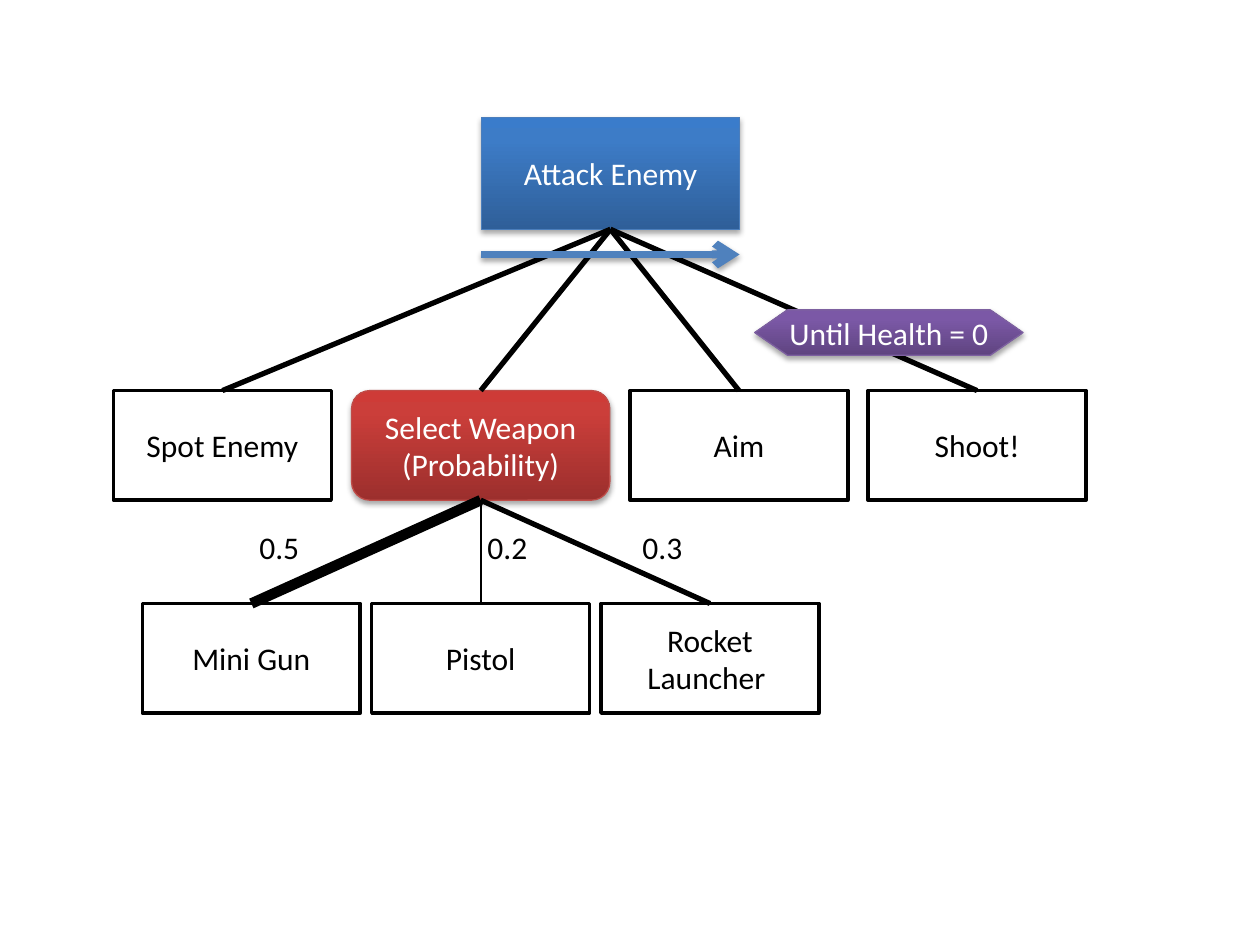
from lxml import etree
from pptx import Presentation
from pptx.dml.color import RGBColor
from pptx.enum.shapes import MSO_CONNECTOR, MSO_SHAPE
from pptx.enum.text import MSO_ANCHOR, MSO_AUTO_SIZE, PP_ALIGN
from pptx.oxml import parse_xml
from pptx.oxml.ns import nsdecls, qn
from pptx.util import Inches, Pt

THEME = {
    "font": "Calibri", "size": 18,
    "white": "FFFFFF", "black": "000000", "arrow": "4F81BD",
    # gradient stops from bottom to top, then outline
    "blue": (("2F5F99", "3D7CC7", "3A7CCB"), "4B7EBC"),
    "red": (("9C2F2D", "CB3E3A", "CE3B37"), "BF4C48"),
    "purple": (("5F4480", "7B58A6", "7C57A8"), "7D60A0"),
}

# Content: behaviour tree, with the weight of each weapon and its line width
ROOT = "Attack Enemy"
SELECTOR = "Select Weapon\n(Probability)"
STEPS = ["Spot Enemy", SELECTOR, "Aim", "Shoot!"]
CONDITION = "Until Health = 0"
WEAPONS = [  # name, probability, label left, line width
    ("Mini Gun", "0.5", 1.96, 6),
    ("Pistol", "0.2", 3.77, 1),
    ("Rocket Launcher ", "0.3", 5.0, 3),
]

# Layout
ACTION_W, COMPOSITE_W, NODE_H = 1.73, 2.05, 0.87
ROOT_LEFT, ROOT_TOP, ROOT_H = 3.82, 0.93, 0.89
STEP_LEFT, STEP_TOP, STEP_GAP = 0.9, 3.1, 0.16
WEAPON_TOP, WEAPON_GAP = 4.79, 0.09
LABEL_TOP, LABEL_W, LABEL_H = 4.14, 0.52, 0.4
ARROW_Y = 2.02
TOP_SIDE, BOTTOM_SIDE = 0, 2

prs = Presentation()
prs.slide_width, prs.slide_height = Inches(10), Inches(7.5)
slide = prs.slides.add_slide(prs.slide_layouts[6])
shapes = slide.shapes


def write(shape, text, color, align):
    frame = shape.text_frame
    frame.text = text
    for paragraph in frame.paragraphs:
        paragraph.alignment = align
        for run in paragraph.runs:
            run.font.name, run.font.size = THEME["font"], Pt(THEME["size"])
            run.font.color.rgb = RGBColor.from_string(color)
    return frame


def add_shadow(shape):
    shape._element.spPr.append(parse_xml(
        f'<a:effectLst {nsdecls("a")}><a:outerShdw blurRad="40000" dist="23000" '
        'dir="5400000" rotWithShape="0"><a:srgbClr val="000000">'
        '<a:alpha val="35000"/></a:srgbClr></a:outerShdw></a:effectLst>'))


def add_node(preset, text, left, top, width, height, color, line_color, line_width):
    node = shapes.add_shape(preset, Inches(left), Inches(top), Inches(width), Inches(height))
    node.shadow.inherit = False
    node.line.color.rgb = RGBColor.from_string(line_color)
    node.line.width = Pt(line_width)
    frame = write(node, text, color, PP_ALIGN.CENTER)
    frame.vertical_anchor = MSO_ANCHOR.MIDDLE
    return node


def add_action(text, left, top):
    node = add_node(MSO_SHAPE.RECTANGLE, text, left, top, ACTION_W, NODE_H,
                    THEME["black"], THEME["black"], 2)
    node.fill.solid()
    node.fill.fore_color.rgb = RGBColor.from_string(THEME["white"])
    return node


def add_glossy(preset, text, left, top, width, height, style):
    colors, outline = THEME[style]
    node = add_node(preset, text, left, top, width, height, THEME["white"], outline, 0.75)
    stops = "".join(f'<a:gs pos="{pos}000"><a:srgbClr val="{color}"/></a:gs>'
                    for pos, color in zip((0, 80, 100), colors))
    props = node._element.spPr
    props.find(qn("a:prstGeom")).addnext(parse_xml(
        f'<a:gradFill {nsdecls("a")} rotWithShape="1"><a:gsLst>{stops}</a:gsLst>'
        '<a:lin ang="16200000" scaled="0"/></a:gradFill>'))
    props.remove(props.find(qn("a:effectLst")))
    add_shadow(node)
    return node


def add_line(start, end, color, width):
    line = shapes.add_connector(MSO_CONNECTOR.STRAIGHT, *map(Inches, start + end))
    line.line.color.rgb = RGBColor.from_string(color)
    line.line.width = Pt(width)
    return line


def add_link(child, parent, width=3):
    link = add_line((0, 0), (0, 0), THEME["black"], width)
    link.begin_connect(child, TOP_SIDE)
    link.end_connect(parent, BOTTOM_SIDE)
    etree.SubElement(link._element.spPr, qn("a:effectLst"))


# Root
root = add_glossy(MSO_SHAPE.ROUNDED_RECTANGLE, ROOT, ROOT_LEFT, ROOT_TOP,
                  COMPOSITE_W, ROOT_H, "blue")
root.adjustments[0] = 0

# Sequence of steps
left = STEP_LEFT
for step in STEPS:
    if step == SELECTOR:
        width = COMPOSITE_W
        node = selector = add_glossy(MSO_SHAPE.ROUNDED_RECTANGLE, step, left, STEP_TOP,
                                     width, NODE_H, "red")
        selector_center = left + width / 2
    else:
        width = ACTION_W
        node = add_action(step, left, STEP_TOP)
    add_link(node, root)
    left += width + STEP_GAP

# Weapons, centred under the selector
pitch = ACTION_W + WEAPON_GAP
first_left = selector_center - (len(WEAPONS) * pitch - WEAPON_GAP) / 2
for index, (weapon, probability, label_left, link_width) in enumerate(WEAPONS):
    node = add_action(weapon, first_left + index * pitch, WEAPON_TOP)
    add_link(node, selector, link_width)
    label = shapes.add_textbox(Inches(label_left), Inches(LABEL_TOP),
                               Inches(LABEL_W), Inches(LABEL_H))
    frame = write(label, probability, THEME["black"], PP_ALIGN.LEFT)
    frame.word_wrap = False
    frame.auto_size = MSO_AUTO_SIZE.SHAPE_TO_FIT_TEXT

# Order arrow under the root
arrow = add_line((ROOT_LEFT, ARROW_Y), (ROOT_LEFT + COMPOSITE_W, ARROW_Y), THEME["arrow"], 4.5)
etree.SubElement(arrow.line._get_or_add_ln(), qn("a:tailEnd"), type="arrow")
add_shadow(arrow)

# Loop condition
condition = add_glossy(MSO_SHAPE.HEXAGON, CONDITION, 5.99, 2.46, 2.13, 0.36, "purple")
condition.adjustments[0] = 0.72
condition.text_frame.word_wrap = False

prs.save("out.pptx")
